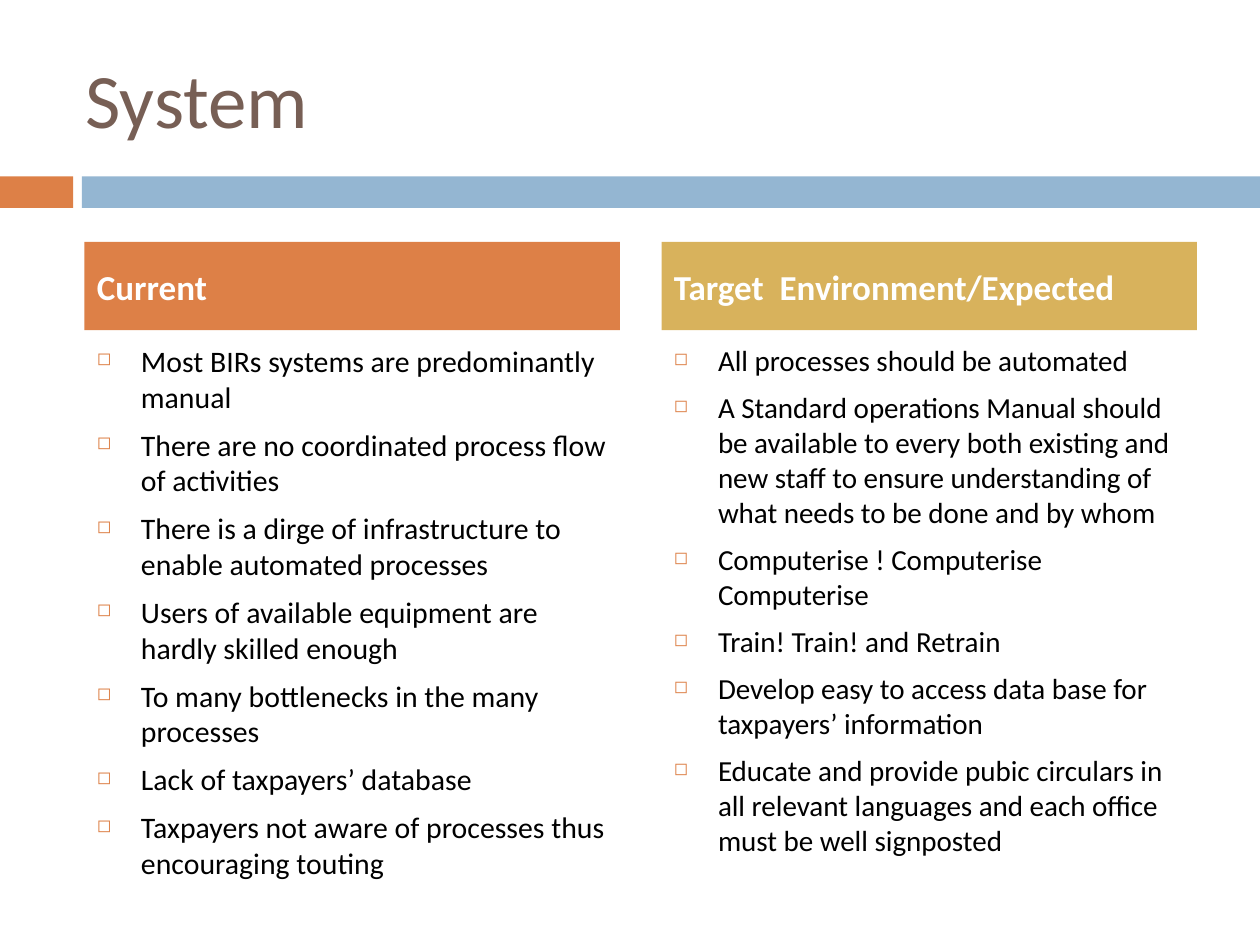
from lxml import etree
from pptx import Presentation
from pptx.dml.color import RGBColor
from pptx.enum.shapes import MSO_SHAPE
from pptx.enum.text import MSO_ANCHOR, PP_ALIGN
from pptx.oxml.ns import qn
from pptx.util import Inches, Pt

RECT = MSO_SHAPE.RECTANGLE
MIDDLE, TOP = MSO_ANCHOR.MIDDLE, MSO_ANCHOR.TOP
LEFT = PP_ALIGN.LEFT
FONT = "Calibri"
COLORS = {
    "orange": "DD8047",
    "blue": "94B6D2",
    "gold": "D8B25C",
    "brown": "775F55",
    "black": "000000",
    "white": "FFFFFF",
}

TITLE = "System"
BANDS = [(0, 0.58, "orange"), (0.65, 9.35, "blue")]
COLUMNS = [
    {
        "head": "Current",
        "fill": "orange",
        "size": 17,
        "items": [
            "Most BIRs systems are predominantly manual",
            "There are no coordinated process flow of activities",
            "There is a dirge of infrastructure to enable automated processes",
            "Users of available equipment are hardly skilled enough",
            "To many bottlenecks in the many processes",
            "Lack of taxpayers’ database",
            "Taxpayers not aware of processes thus encouraging touting",
        ],
    },
    {
        "head": "Target  Environment/Expected",
        "fill": "gold",
        "size": 16.6,
        "items": [
            "All processes should be automated",
            "A Standard operations Manual should be available to every both "
            "existing and new staff to ensure understanding of what needs to "
            "be done and by whom",
            "Computerise ! Computerise Computerise",
            "Train! Train! and Retrain",
            "Develop easy to access data base for taxpayers’ information",
            "Educate and provide pubic circulars in all relevant languages "
            "and each office must be well signposted",
        ],
    },
]
START, WIDTH, GAP = 0.67, 4.25, 0.33


def color(name):
    return RGBColor.from_string(COLORS[name])


def add_rect(slide, box, fill):
    shape = slide.shapes.add_shape(RECT, *map(Inches, box))
    shape.shadow.inherit = False
    shape.fill.solid()
    shape.fill.fore_color.rgb = color(fill)
    shape.line.fill.background()
    return shape


def add_box(slide, box):
    return slide.shapes.add_textbox(*map(Inches, box))


def add_bullet(para):
    props = para._p.get_or_add_pPr()
    props.set("marL", str(Inches(0.35)))
    props.set("indent", str(-Inches(0.35)))
    tint = etree.SubElement(props, qn("a:buClr"))
    etree.SubElement(tint, qn("a:srgbClr"), val=COLORS["orange"])
    etree.SubElement(props, qn("a:buSzPct"), val="60000")
    etree.SubElement(props, qn("a:buChar"), char="◻")


def write(shape, lines, size, ink, anchor=MIDDLE, space=0, bold=False, bullet=False):
    frame = shape.text_frame
    frame.word_wrap = True
    frame.vertical_anchor = anchor
    for i, line in enumerate(lines):
        para = frame.add_paragraph() if i else frame.paragraphs[0]
        para.alignment = LEFT
        para.space_before = Pt(space)
        if bullet:
            add_bullet(para)
        run = para.add_run()
        run.text = line
        run.font.name = FONT
        run.font.size = Pt(size)
        run.font.bold = bold
        run.font.color.rgb = color(ink)


def main():
    deck = Presentation()
    deck.slide_width, deck.slide_height = Inches(10), Inches(7.5)
    slide = deck.slides.add_slide(deck.slide_layouts[6])

    for left, width, fill in BANDS:
        add_rect(slide, (left, 1.4, width, 0.25), fill)
    write(add_box(slide, (0.58, 0.3, 8.92, 0.95)), [TITLE], 44, "brown")

    for i, col in enumerate(COLUMNS):
        left = START + i * (WIDTH + GAP)
        body = add_box(slide, (left, 2.67, WIDTH, 3.92))
        write(body, col["items"], col["size"], "black", TOP, space=7, bullet=True)
        head = add_rect(slide, (left, 1.92, WIDTH, 0.7), col["fill"])
        write(head, [col["head"]], 20, "white", space=7, bold=True)

    deck.save("out.pptx")


if __name__ == "__main__":
    main()
